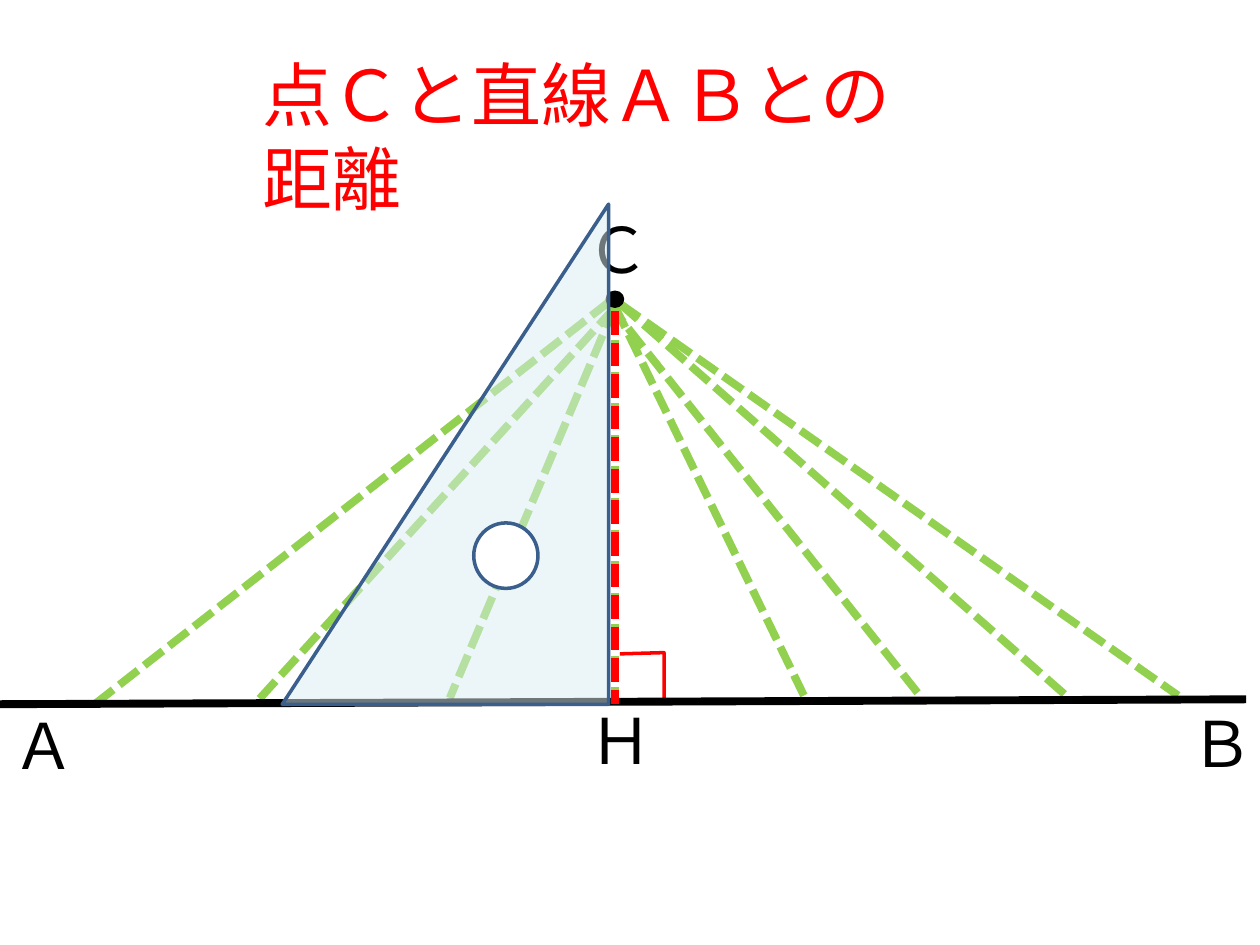
"""Build the slide showing the distance from point C to line AB."""
from dataclasses import dataclass

from lxml import etree
from pptx import Presentation
from pptx import util as u
from pptx.dml.color import RGBColor
from pptx.enum import dml, shapes, text
from pptx.oxml.ns import qn

BLACK = RGBColor(0x00, 0x00, 0x00)
WHITE = RGBColor(0xFF, 0xFF, 0xFF)
RED = RGBColor(0xFF, 0x00, 0x00)
GREEN = RGBColor(0x92, 0xD0, 0x50)
PALE_BLUE = RGBColor(0xDB, 0xEE, 0xF4)
OUTLINE = RGBColor(0x3A, 0x5F, 0x8C)
FONT = "Calibri"


@dataclass
class Label:
    text: str
    x: float
    y: float
    w: float


@dataclass
class Segment:
    x1: float
    y1: float
    x2: float
    y2: float
    color: RGBColor = GREEN
    dashed: bool = True


SLANTS = [
    Segment(4.92, 2.41, 9.35, 5.52),
    Segment(4.92, 2.41, 8.46, 5.52),
    Segment(4.83, 2.41, 7.3, 5.52),
    Segment(4.88, 2.43, 6.38, 5.52),
    Segment(4.88, 2.45, 4.88, 5.57),
    Segment(4.88, 2.43, 3.57, 5.54),
    Segment(4.88, 2.44, 2.02, 5.59),
    Segment(0.75, 5.59, 4.88, 2.36),
]
LINE_AB = Segment(9.89, 5.55, -0.22, 5.59, BLACK, False)
HEIGHT_CH = Segment(4.88, 2.47, 4.88, 5.59, RED)
LABELS = [
    Label("Ｈ", 4.58, 5.52, 0.59),
    Label("Ｃ", 4.56, 1.62, 0.58),
    Label("Ａ", 0, 5.56, 0.56),
    Label("Ｂ", 9.35, 5.54, 0.59),
]


def write(sp, content: str, *, size: int, color: RGBColor, wrap: bool) -> None:
    """Put one left-aligned run of text in a shape."""
    tf = sp.text_frame
    tf.word_wrap = wrap
    tf.auto_size = text.MSO_AUTO_SIZE.NONE
    tf.vertical_anchor = text.MSO_ANCHOR.TOP
    p = tf.paragraphs[0]
    p.alignment = text.PP_ALIGN.LEFT
    r = p.add_run()
    r.text = content
    r.font.name = FONT
    r.font.size = u.Pt(size)
    r.font.color.rgb = color


def draw_label(s, label: Label) -> None:
    """Name a point of the figure."""
    box = s.shapes.add_textbox(*map(u.Inches, (label.x, label.y, label.w, 0.71)))
    write(box, label.text, size=36, color=BLACK, wrap=False)


def draw_segment(s, seg: Segment) -> None:
    """Draw a thick straight line."""
    ends = map(u.Inches, (seg.x1, seg.y1, seg.x2, seg.y2))
    line = s.shapes.add_connector(shapes.MSO_CONNECTOR.STRAIGHT, *ends)
    line.line.color.rgb = seg.color
    line.line.width = u.Pt(4.5)
    if seg.dashed:
        line.line.dash_style = dml.MSO_LINE.SQUARE_DOT
    etree.SubElement(line.element.spPr, qn("a:effectLst"))


def draw_shape(parent, kind, box: tuple[float, ...], fill: RGBColor, line: RGBColor):
    """Draw a filled preset shape with a thin outline."""
    sp = parent.shapes.add_shape(kind, *map(u.Inches, box))
    sp.shadow.inherit = False
    sp.fill.solid()
    sp.fill.fore_color.rgb = fill
    sp.line.color.rgb = line
    sp.line.width = u.Pt(2)
    return sp


def draw_right_angle(s) -> None:
    """Mark the right angle at H."""
    builder = s.shapes.build_freeform(u.Inches(4.92), u.Inches(5.19))
    corners = [(5.27, 5.18), (5.27, 5.55)]
    builder.add_line_segments([(u.Inches(x), u.Inches(y)) for x, y in corners], close=False)
    sp = builder.convert_to_shape()
    sp.shadow.inherit = False
    sp.fill.background()
    sp.line.color.rgb = RED
    sp.line.width = u.Pt(2)


def draw_set_square(s) -> None:
    """Draw the translucent set square with its round hole."""
    group = s.shapes.add_group_shape()
    kinds = shapes.MSO_SHAPE
    sp = draw_shape(group, kinds.RIGHT_TRIANGLE, (2.24, 1.62, 2.59, 3.97), PALE_BLUE, OUTLINE)
    sp.element.spPr.get_or_add_xfrm().set("flipH", "1")
    color = sp.element.spPr.find(qn("a:solidFill"))[0]
    etree.SubElement(color, qn("a:alpha"), val="50000")
    draw_shape(group, kinds.OVAL, (3.76, 4.15, 0.51, 0.52), WHITE, OUTLINE)


def main() -> None:
    """Build and save the slide."""
    prs = Presentation()
    prs.slide_width, prs.slide_height = u.Inches(10), u.Inches(7.5)
    s = prs.slides.add_slide(prs.slide_layouts[5])
    title = s.shapes.title
    title.left, title.top, title.width, title.height = map(u.Inches, (1.98, 0.36, 5.68, 0.77))
    write(title, "点Ｃと直線ＡＢとの距離", size=40, color=RED, wrap=True)
    for label in LABELS:
        draw_label(s, label)
    draw_right_angle(s)
    for seg in SLANTS:
        draw_segment(s, seg)
    draw_shape(s, shapes.MSO_SHAPE.OVAL, (4.82, 2.32, 0.12, 0.11), BLACK, BLACK)
    draw_segment(s, LINE_AB)
    draw_segment(s, HEIGHT_CH)
    draw_set_square(s)
    prs.save("out.pptx")


if __name__ == "__main__":
    main()
